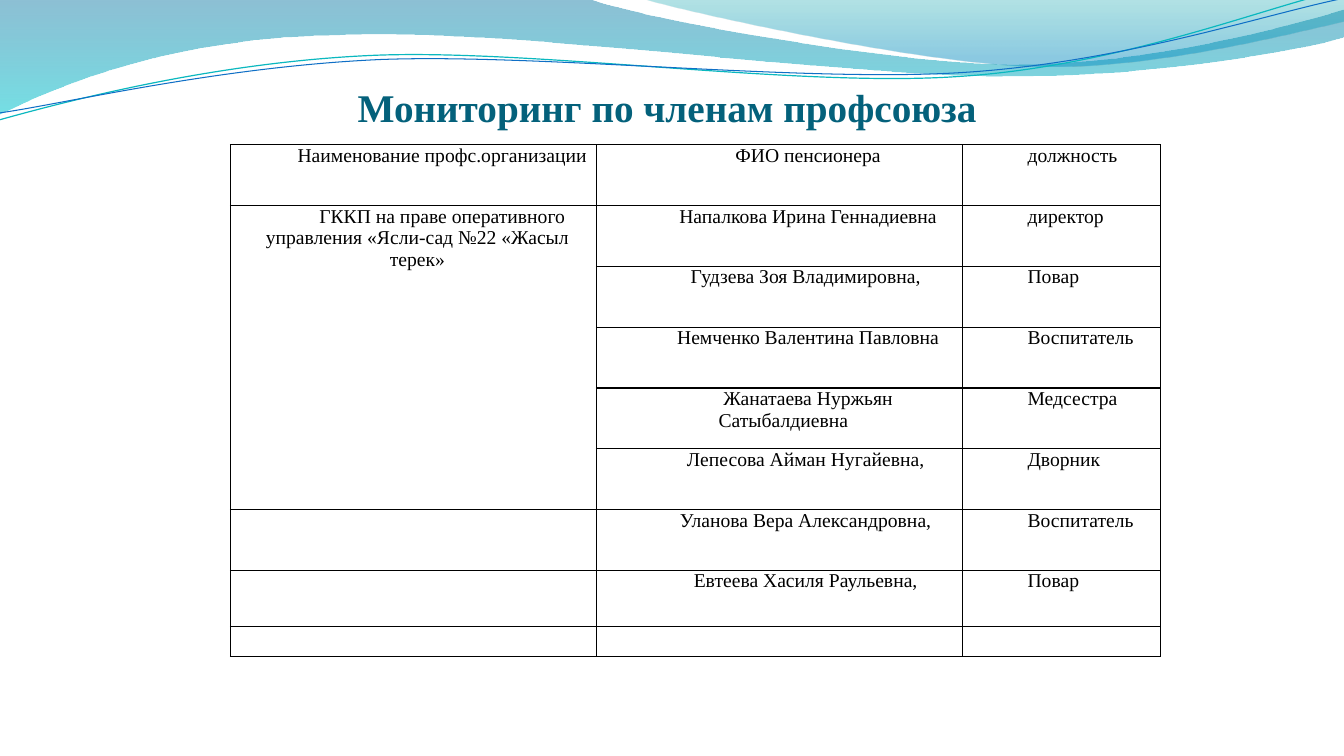
from lxml import etree
from pptx import Presentation
from pptx.dml.color import RGBColor
from pptx.enum.text import MSO_ANCHOR, PP_ALIGN
from pptx.oxml.ns import qn
from pptx.util import Pt

CENTER, LEFT = PP_ALIGN.CENTER, PP_ALIGN.LEFT
BOTTOM = MSO_ANCHOR.BOTTOM

FONT = "Times New Roman"
COLORS = {
    "title": "04617B", "text": "000000", "border": "000000",
    "back_top": "0074A1", "back_bottom": "00C6CF",
    "front_top": "00A1A9", "front_bottom": "008BBF",
    "teal_line": "0AB8BF", "blue_line": "0F6FC6",
}

TITLE = "Мониторинг по членам профсоюза "
HEADER = ("Наименование профс.организации", "ФИО пенсионера", "должность")
ORGANIZATION = "ГККП на праве оперативного управления «Ясли-сад №22 «Жасыл терек»"
ORGANIZATION_ROWS = 5
MEMBERS = [
    ("Напалкова Ирина Геннадиевна", "директор"),
    ("Гудзева Зоя Владимировна, ", "Повар"),
    ("Немченко Валентина Павловна", "Воспитатель"),
    ("Жанатаева Нуржьян Сатыбалдиевна", "Медсестра"),
    ("Лепесова Айман Нугайевна, ", "Дворник"),
    ("Уланова Вера Александровна, ", "Воспитатель"),
    ("Евтеева Хасиля Раульевна, ", "Повар"),
]
ROWS = [HEADER]
for index, (member, position) in enumerate(MEMBERS):
    ROWS.append((ORGANIZATION if index == 0 else "", member, position))
ROWS.append(("", "", ""))

COLUMN_WIDTHS = (261.4, 261.4, 141.8)
ROW_HEIGHTS = [43.45] * 7 + [39.9, 21.5]
COLUMN_ALIGNMENTS = (CENTER, CENTER, LEFT)

BANDS = [
    {"start": (0, 0),
     "segments": [
         [(422.6, 0)],
         [(456.5, 12.9), (637.2, 46.1), (727.9, 46.1)],
         [(819.4, 46.1), (920.2, 19.4), (959.8, 7.2)],
         [(961.2, 26.6)],
         [(943.9, 32.4), (835.2, 55.4), (715.7, 54.7)],
         [(596.9, 54.7), (366.5, 20.9), (247, 25.2)],
         [(123.1, 26.6), (43.9, 60.5), (-0.7, 82.1)]],
     "stops": [(0, "back_top", 45), (1, "back_bottom", 55)]},
    {"start": (460.1, 0),
     "segments": [
         [(488.9, 8.6), (654.5, 45.3), (738, 47.5)],
         [(821.5, 50.4), (923, 23.7), (959.8, 15.8)],
         [(959.8, 0)]],
     "stops": [(0, "front_top", 30), (0.8, "front_bottom", 45)]},
]
WAVE_LINES = [
    {"start": (-0.7, 85.7),
     "segments": [
         [(46.1, 72.7), (151.9, 44.6), (265.7, 39.6)],
         [(379.4, 34.6), (568.8, 62.6), (684, 54.7)],
         [(799.2, 47.5), (901.4, 5.8), (958.3, -7.2)]],
     "color": "teal_line", "width": 0.85},
    {"start": (0, 80.6),
     "segments": [
         [(45.4, 74.2), (157, 47.5), (272.2, 42.5)],
         [(386.6, 38.2), (573.1, 59), (687.6, 51.8)],
         [(802.8, 44.6), (903.6, 10.1), (960.5, -1.4)]],
     "color": "blue_line", "width": 0.75},
]


def rgb(name):
    return RGBColor.from_string(COLORS[name])


def add_outline(slide, outline, closed):
    start_x, start_y = outline["start"]
    points = [(Pt(x), Pt(y)) for segment in outline["segments"] for x, y in segment]
    builder = slide.shapes.build_freeform(Pt(start_x), Pt(start_y))
    builder.add_line_segments(points, close=closed)
    shape = builder.convert_to_shape()
    shape.shadow.inherit = False
    steps = iter(shape._element.findall(".//" + qn("a:lnTo")))
    for segment in outline["segments"]:
        segment_steps = [next(steps) for _ in segment]
        if len(segment) == 3:
            curve = etree.Element(qn("a:cubicBezTo"))
            segment_steps[0].addprevious(curve)
            for step in segment_steps:
                curve.append(step[0])
                step.getparent().remove(step)
    return shape


def add_band(slide, band):
    shape = add_outline(slide, band, True)
    shape.line.fill.background()
    shape.fill.gradient()
    shape.fill.gradient_angle = 270
    elements = shape._element.spPr.findall(".//" + qn("a:gs"))
    for stop, element, (place, color, opacity) in zip(
            shape.fill.gradient_stops, elements, band["stops"]):
        stop.position = place
        stop.color.rgb = rgb(color)
        etree.SubElement(element[0], qn("a:alpha"), val=str(opacity * 1000))


def add_wave_line(slide, wave):
    shape = add_outline(slide, wave, False)
    shape.fill.background()
    shape.line.color.rgb = rgb(wave["color"])
    shape.line.width = Pt(wave["width"])


def format_run(run, size, color, bold=False):
    run.font.name = FONT
    run.font.size = Pt(size)
    run.font.bold = bold
    run.font.color.rgb = rgb(color)


def add_title(slide):
    box = slide.shapes.add_textbox(Pt(48), Pt(55.4), Pt(864), Pt(37.4))
    frame = box.text_frame
    frame.word_wrap = True
    frame.vertical_anchor = BOTTOM
    frame.margin_left = frame.margin_right = frame.margin_bottom = 0
    frame.margin_top = Pt(3.6)
    frame.text = TITLE
    frame.paragraphs[0].alignment = CENTER
    format_run(frame.paragraphs[0].runs[0], 28, "title", True)


def add_borders(cell):
    properties = cell._tc.get_or_add_tcPr()
    for place, side in enumerate(("lnL", "lnR", "lnT", "lnB")):
        border = etree.Element(qn("a:" + side), w=str(Pt(1)))
        fill = etree.SubElement(border, qn("a:solidFill"))
        etree.SubElement(fill, qn("a:srgbClr"), val=COLORS["border"])
        properties.insert(place, border)


def fill_cell(cell, text, alignment):
    cell.margin_left = cell.margin_right = Pt(5.4)
    cell.margin_top = cell.margin_bottom = 0
    cell.fill.background()
    add_borders(cell)
    paragraph = cell.text_frame.paragraphs[0]
    if not text:
        paragraph._p.get_or_add_endParaRPr().set("sz", "1400")
        return
    paragraph.text = text
    paragraph.alignment = alignment
    indents = paragraph._p.get_or_add_pPr()
    indents.set("marL", str(Pt(5.8)))
    indents.set("indent", str(Pt(35.4)))
    format_run(paragraph.runs[0], 14, "text")


def add_members_table(slide):
    table = slide.shapes.add_table(
        len(ROWS), len(HEADER), Pt(164.6), Pt(103.4),
        Pt(sum(COLUMN_WIDTHS)), Pt(sum(ROW_HEIGHTS))).table
    table.first_row = table.horz_banding = False
    for column, width in zip(table.columns, COLUMN_WIDTHS):
        column.width = Pt(width)
    for row, height, texts in zip(table.rows, ROW_HEIGHTS, ROWS):
        row.height = Pt(height)
        for cell, text, alignment in zip(row.cells, texts, COLUMN_ALIGNMENTS):
            fill_cell(cell, text, alignment)
    table.cell(1, 0).merge(table.cell(ORGANIZATION_ROWS, 0))


def main():
    deck = Presentation()
    deck.slide_width, deck.slide_height = Pt(960), Pt(540)
    slide = deck.slides.add_slide(deck.slide_layouts[6])
    for band in BANDS:
        add_band(slide, band)
    for wave in WAVE_LINES:
        add_wave_line(slide, wave)
    add_title(slide)
    add_members_table(slide)
    deck.save("out.pptx")


if __name__ == "__main__":
    main()
